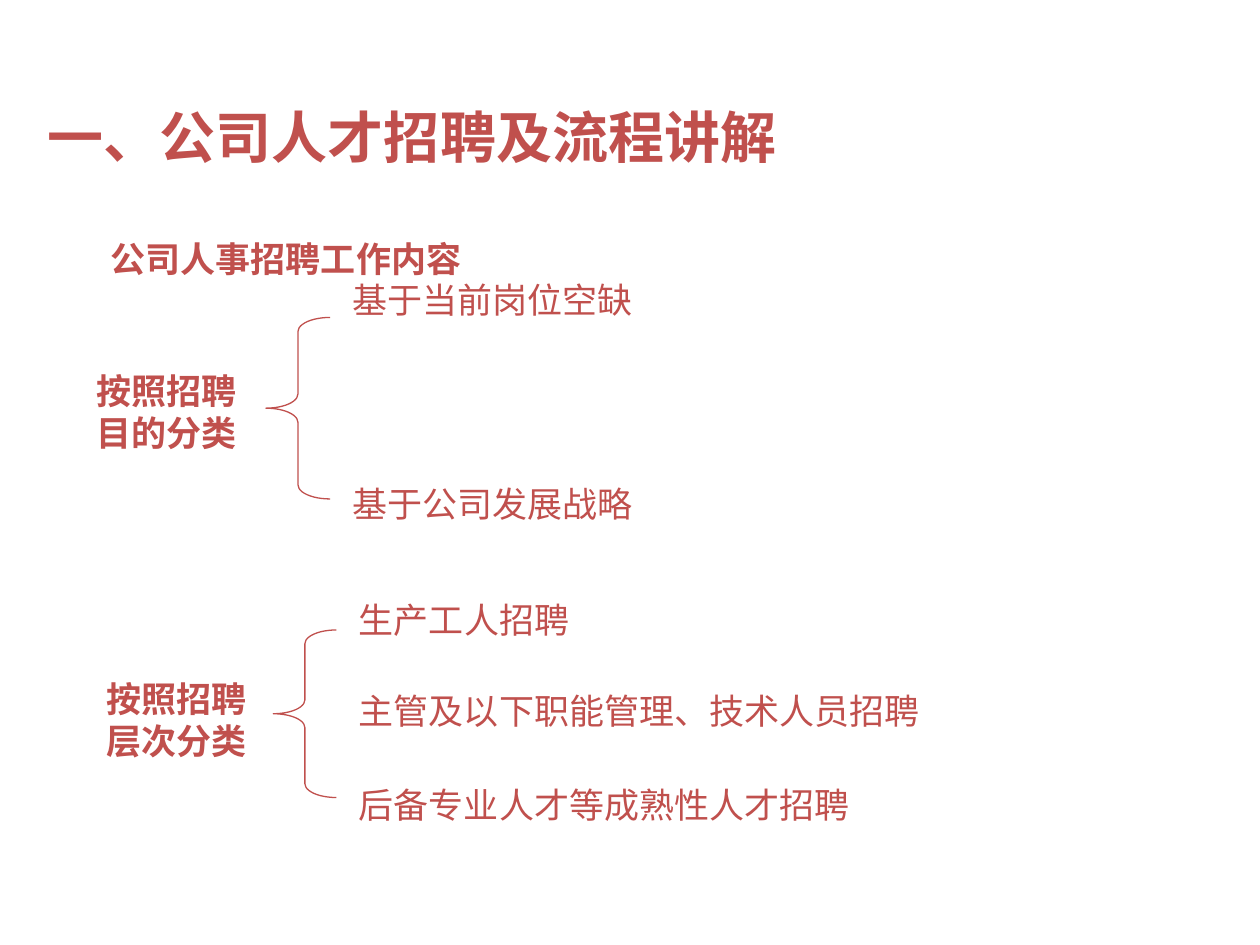
"""Build a slide that classifies company recruitment by purpose and by level."""
from dataclasses import dataclass

from pptx import Presentation
from pptx.dml.color import RGBColor
from pptx.enum.shapes import MSO_SHAPE
from pptx.enum.text import MSO_ANCHOR, MSO_AUTO_SIZE, PP_ALIGN
from pptx.util import Inches, Pt


@dataclass(frozen=True)
class Theme:
    accent: RGBColor = RGBColor(0xC0, 0x50, 0x4D)
    title_font: str = "Calibri"
    heading_font: str = "Times New Roman"
    body_font: str = "DejaVu Sans"
    title_size: Pt = Pt(32)
    body_size: Pt = Pt(20)
    brace_width: Pt = Pt(0.75)


theme = Theme()


def write_text(shape, text, font_name, size, bold=False, anchor=MSO_ANCHOR.TOP):
    frame = shape.text_frame
    frame.word_wrap = True
    frame.auto_size = MSO_AUTO_SIZE.NONE
    frame.vertical_anchor = anchor
    paragraph = frame.paragraphs[0]
    paragraph.alignment = PP_ALIGN.LEFT
    run = paragraph.add_run()
    run.text = text
    run.font.name = font_name
    run.font.size = size
    run.font.bold = bold
    run.font.color.rgb = theme.accent


def inches(*lengths):
    return [Inches(length) for length in lengths]


presentation = Presentation()
presentation.slide_width, presentation.slide_height = inches(10, 7.5)
slide = presentation.slides.add_slide(presentation.slide_layouts[5])

title = slide.shapes.title
title.left, title.top, title.width, title.height = inches(0.28, 0.76, 9.22, 0.8)
write_text(title, "一、公司人才招聘及流程讲解", theme.title_font, theme.title_size, bold=True)

heading = slide.shapes.add_textbox(*inches(0.78, 1.7, 5.99, 0.71))
write_text(heading, "公司人事招聘工作内容", theme.heading_font, theme.body_size,
           bold=True, anchor=MSO_ANCHOR.MIDDLE)

classifications = [
    {
        "label": ("按照招聘目的分类", (0.67, 2.88, 1.35, 0.83)),
        "brace": (2.11, 2.52, 0.51, 1.44),
        "items": [
            ("基于当前岗位空缺", (2.7, 2.16, 5.92, 0.44)),
            ("基于公司发展战略", (2.7, 3.78, 5.58, 0.44)),
        ],
    },
    {
        "label": ("按照招聘层次分类", (0.75, 5.33, 1.33, 0.77)),
        "brace": (2.17, 5, 0.5, 1.33),
        "items": [
            ("生产工人招聘", (2.75, 4.7, 5.65, 0.43)),
            ("主管及以下职能管理、技术人员招聘", (2.75, 5.42, 5, 0.43)),
            ("后备专业人才等成熟性人才招聘", (2.75, 6.17, 6.17, 0.43)),
        ],
    },
]

for classification in classifications:
    group = slide.shapes.add_group_shape()

    brace = group.shapes.add_shape(MSO_SHAPE.LEFT_BRACE, *inches(*classification["brace"]))
    brace.adjustments[0] = 0.22
    brace.shadow.inherit = False
    brace.fill.background()
    brace.line.color.rgb = theme.accent
    brace.line.width = theme.brace_width

    label_text, label_box = classification["label"]
    label = group.shapes.add_textbox(*inches(*label_box))
    write_text(label, label_text, theme.body_font, theme.body_size, bold=True)

    for item_text, item_box in classification["items"]:
        item = group.shapes.add_textbox(*inches(*item_box))
        write_text(item, item_text, theme.body_font, theme.body_size)

presentation.save("out.pptx")
